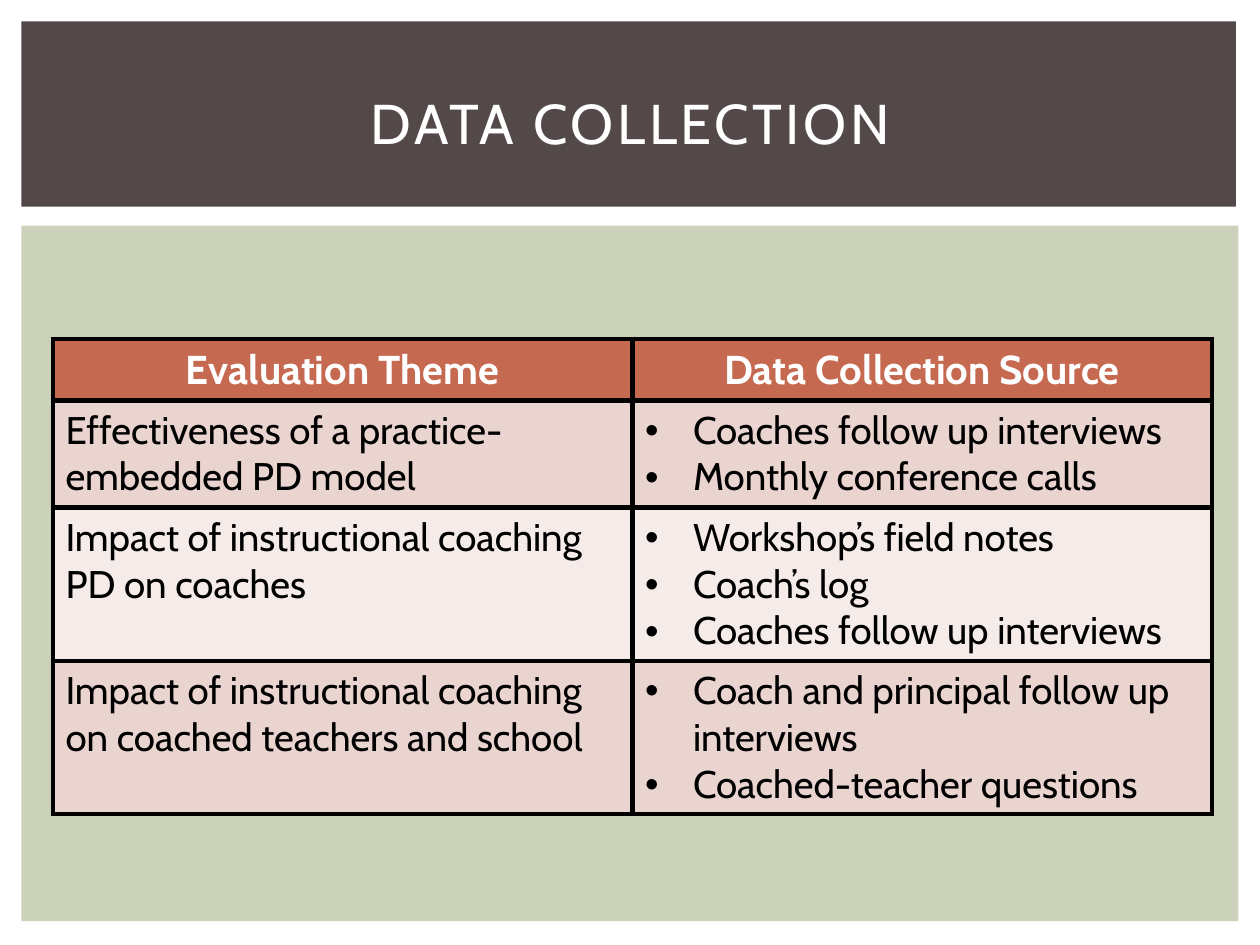
"""Build the data collection slide: a title band above a table of evaluation themes."""
from dataclasses import dataclass

import pptx
import pptx.dml.color
import pptx.enum.shapes
import pptx.enum.text
import pptx.oxml
import pptx.oxml.ns
import pptx.util

GRID_COLUMNS, GRID_ROWS = 1000, 750
SLIDE_WIDTH, SLIDE_HEIGHT = pptx.util.Inches(10), pptx.util.Inches(7.5)
CENTER = pptx.enum.text.PP_ALIGN.CENTER
LEFT = pptx.enum.text.PP_ALIGN.LEFT
MIDDLE = pptx.enum.text.MSO_ANCHOR.MIDDLE


@dataclass(frozen=True)
class Theme:
    font: str = "Cabin"
    panel: str = "CCD1B9"
    band: str = "534949"
    header: str = "C66951"
    stripes: tuple[str, str] = ("EAD4D0", "F5EBE9")
    light: str = "FFFFFF"
    dark: str = "000000"
    title_size: int = 32
    header_size: int = 23
    body_size: int = 22
    border_width: int = 3


@dataclass(frozen=True)
class Box:
    column: int
    row: int
    columns: int
    rows: int

    def lengths(self) -> tuple[int, int, int, int]:
        return (across(self.column), down(self.row),
                across(self.columns), down(self.rows))


@dataclass(frozen=True)
class Entry:
    theme: str
    sources: tuple[str, ...]
    rows: int


THEME = Theme()
PANEL = Box(17, 179, 966, 552)
BAND = Box(17, 17, 964, 147)
TITLE = Box(42, 39, 917, 115)
TABLE = Box(42, 269, 920, 376)
HEADER_ROWS = 49
BULLET_INDENT = 38
HEADINGS = ("Evaluation Theme", "Data Collection Source")
ENTRIES = (
    Entry("Effectiveness of a practice-embedded PD model",
          ("Coaches follow up interviews", "Monthly conference calls"), 85),
    Entry("Impact of instructional coaching PD on coaches",
          ("Workshop’s field notes", "Coach’s log", "Coaches follow up interviews"), 121),
    Entry("Impact of instructional coaching on coached teachers and school",
          ("Coach and principal follow up interviews", "Coached-teacher questions"), 121),
)


def across(columns: int) -> int:
    return int(SLIDE_WIDTH * columns / GRID_COLUMNS)


def down(rows: int) -> int:
    return int(SLIDE_HEIGHT * rows / GRID_ROWS)


def paint(fill, color: str) -> None:
    fill.solid()
    fill.fore_color.rgb = pptx.dml.color.RGBColor.from_string(color)


def add_panel(slide, box: Box, color: str) -> None:
    shape = slide.shapes.add_shape(pptx.enum.shapes.MSO_SHAPE.RECTANGLE, *box.lengths())
    shape.shadow.inherit = False
    paint(shape.fill, color)
    shape.line.fill.background()


def write(frame, lines: tuple[str, ...], size: int, color: str,
          bold: bool = False, alignment=LEFT) -> None:
    formats = {"name": THEME.font, "size": pptx.util.Pt(size), "bold": bold}
    frame.word_wrap = True
    for index, line in enumerate(lines):
        paragraph = frame.paragraphs[0] if index == 0 else frame.add_paragraph()
        paragraph.alignment = alignment
        run = paragraph.add_run()
        run.text = line
        for name, value in formats.items():
            setattr(run.font, name, value)
        paint(run.font.fill, color)


def add_title(slide, text: str) -> None:
    frame = slide.shapes.add_textbox(*TITLE.lengths()).text_frame
    frame.vertical_anchor = MIDDLE
    write(frame, (text,), THEME.title_size, THEME.light, alignment=CENTER)
    frame.paragraphs[0].runs[0].font._element.set("spc", "200")


def add_bullets(frame) -> None:
    indent = across(BULLET_INDENT)
    for paragraph in frame.paragraphs:
        properties = paragraph._p.get_or_add_pPr()
        properties.set("marL", str(indent))
        properties.set("indent", str(-indent))
        namespace = pptx.oxml.ns.nsdecls("a")
        for tag in (f'<a:buFont {namespace} typeface="Arial"/>',
                    f'<a:buChar {namespace} char="•"/>'):
            properties.append(pptx.oxml.parse_xml(tag))


def style_cell(cell, color: str) -> None:
    paint(cell.fill, color)
    width = pptx.util.Pt(THEME.border_width)
    for index, side in enumerate(("lnL", "lnR", "lnT", "lnB")):
        border = pptx.oxml.parse_xml(
            f'<a:{side} {pptx.oxml.ns.nsdecls("a")} w="{width}"><a:solidFill>'
            f'<a:srgbClr val="{THEME.dark}"/></a:solidFill></a:{side}>')
        cell._tc.get_or_add_tcPr().insert(index, border)


def add_theme_table(slide) -> None:
    table = slide.shapes.add_table(
        len(ENTRIES) + 1, len(HEADINGS), *TABLE.lengths()).table
    for column in table.columns:
        column.width = across(TABLE.columns // len(HEADINGS))
    table.rows[0].height = down(HEADER_ROWS)
    for index, heading in enumerate(HEADINGS):
        cell = table.cell(0, index)
        style_cell(cell, THEME.header)
        write(cell.text_frame, (heading,), THEME.header_size, THEME.light, True, CENTER)
    for index, entry in enumerate(ENTRIES):
        table.rows[index + 1].height = down(entry.rows)
        for column, lines in enumerate(((entry.theme,), entry.sources)):
            cell = table.cell(index + 1, column)
            style_cell(cell, THEME.stripes[index % 2])
            write(cell.text_frame, lines, THEME.body_size, THEME.dark)
        add_bullets(table.cell(index + 1, 1).text_frame)


def main() -> None:
    presentation = pptx.Presentation()
    presentation.slide_width, presentation.slide_height = SLIDE_WIDTH, SLIDE_HEIGHT
    slide = presentation.slides.add_slide(presentation.slide_layouts[6])
    add_panel(slide, PANEL, THEME.panel)
    add_panel(slide, BAND, THEME.band)
    add_theme_table(slide)
    add_title(slide, "DATA COLLECTION")
    presentation.save("out.pptx")


if __name__ == "__main__":
    main()
